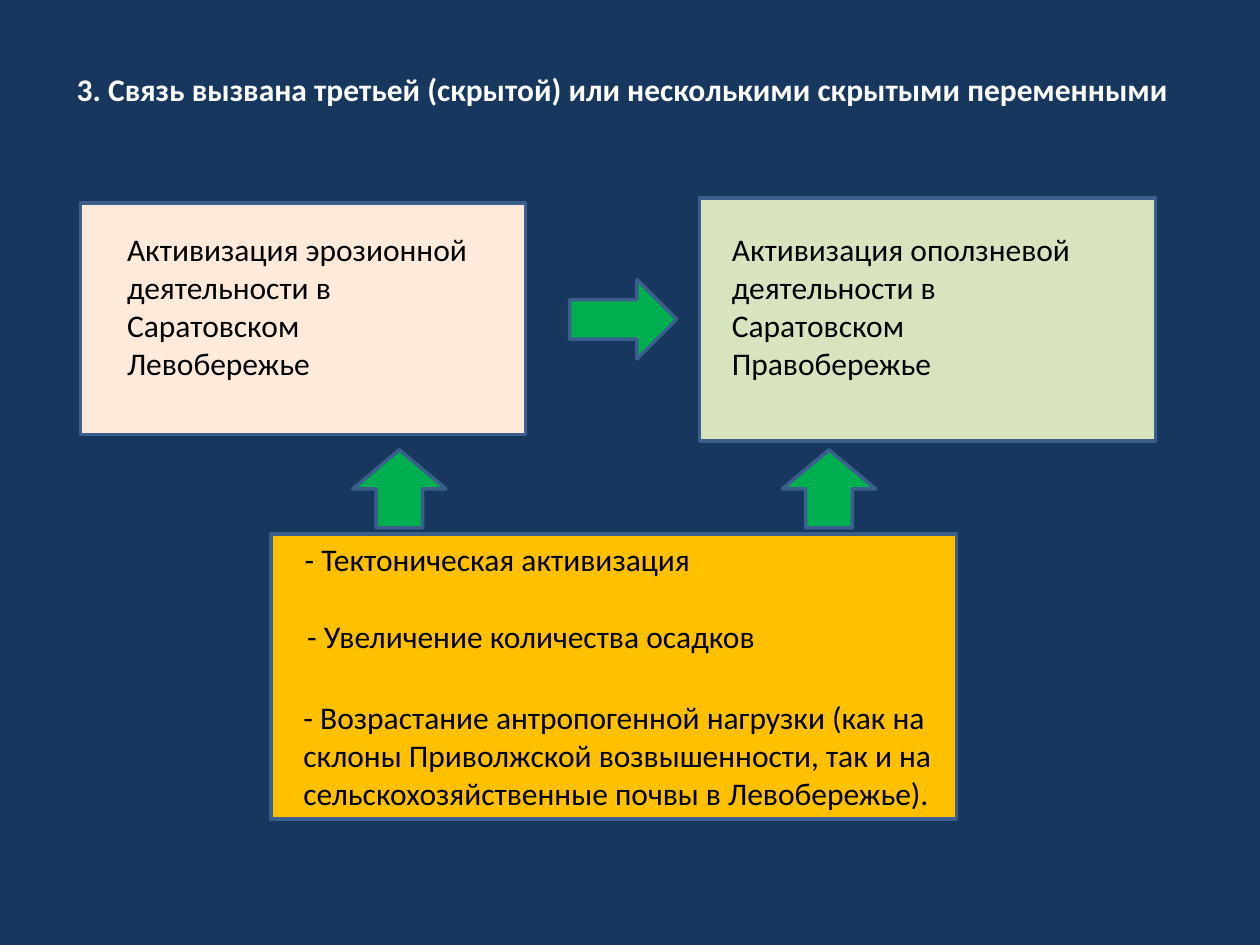
from pptx import Presentation
from pptx.dml.color import RGBColor
from pptx.enum.shapes import MSO_SHAPE
from pptx.enum.text import MSO_AUTO_SIZE
from pptx.util import Inches, Pt

NAVY = RGBColor(0x17, 0x37, 0x5E)
EDGE = RGBColor(0x3A, 0x5F, 0x8C)
PEACH = RGBColor(0xFD, 0xEA, 0xDA)
OLIVE = RGBColor(0xD7, 0xE4, 0xBD)
GOLD = RGBColor(0xFF, 0xC0, 0x00)
GREEN = RGBColor(0x00, 0xB0, 0x50)
WHITE = RGBColor(0xFF, 0xFF, 0xFF)
BLACK = RGBColor(0x00, 0x00, 0x00)

TITLE = "3. Связь вызвана третьей (скрытой) или несколькими скрытыми переменными"
BOXES = [
    (PEACH, (0.64, 1.61, 3.53, 1.84)),
    (OLIVE, (5.55, 1.57, 3.62, 1.93)),
    (GOLD, (2.15, 4.24, 5.44, 2.26)),
]
EFFECTS = [
    ("Активизация эрозионной деятельности в Саратовском Левобережье", 0.91),
    ("Активизация оползневой деятельности в Саратовском Правобережье", 5.71),
]
CAUSES = [
    ("- Тектоническая активизация", (2.32, 4.24, 3.3, 0.4), False),
    ("- Увеличение количества осадков", (2.34, 4.85, 3.8, 0.4), False),
    ("- Возрастание антропогенной нагрузки (как на склоны Приволжской "
     "возвышенности, так и на сельскохозяйственные почвы в Левобережье).",
     (2.31, 5.49, 5.75, 1.01), True),
]
ARROWS = [(MSO_SHAPE.RIGHT_ARROW, (4.52, 2.22, 0.85, 0.63))] + [
    (MSO_SHAPE.UP_ARROW, (left, 3.57, 0.74, 0.62)) for left in (6.21, 2.8)
]


def add_block(slide, kind, place, fill):
    block = slide.shapes.add_shape(kind, *map(Inches, place))
    block.shadow.inherit = False
    block.fill.solid()
    block.fill.fore_color.rgb = fill
    block.line.color.rgb = EDGE
    block.line.width = Pt(2)


def add_text(slide, text, place, wrap=True, color=BLACK, bold=False):
    frame = slide.shapes.add_textbox(*map(Inches, place)).text_frame
    frame.text = text
    frame.word_wrap = wrap
    frame.auto_size = MSO_AUTO_SIZE.SHAPE_TO_FIT_TEXT
    font = frame.paragraphs[0].runs[0].font
    font.name = "Calibri"
    font.size = Pt(18)
    font.bold = bold
    font.color.rgb = color
    return frame


def main():
    deck = Presentation()
    deck.slide_width, deck.slide_height = Inches(10), Inches(7.5)
    slide = deck.slides.add_slide(deck.slide_layouts[6])
    slide.background.fill.solid()
    slide.background.fill.fore_color.rgb = NAVY

    for fill, place in BOXES:
        add_block(slide, MSO_SHAPE.RECTANGLE, place, fill)

    title = add_text(slide, TITLE, (0.51, 0.36, 9.45, 0.51), color=WHITE, bold=True)
    title.paragraphs[0].line_spacing = 1.5
    for text, left in EFFECTS:
        add_text(slide, text, (left, 1.78, 2.99, 1.31))
    for text, place, wrap in CAUSES:
        add_text(slide, text, place, wrap)

    for kind, place in ARROWS:
        add_block(slide, kind, place, GREEN)

    deck.save("out.pptx")


if __name__ == "__main__":
    main()
